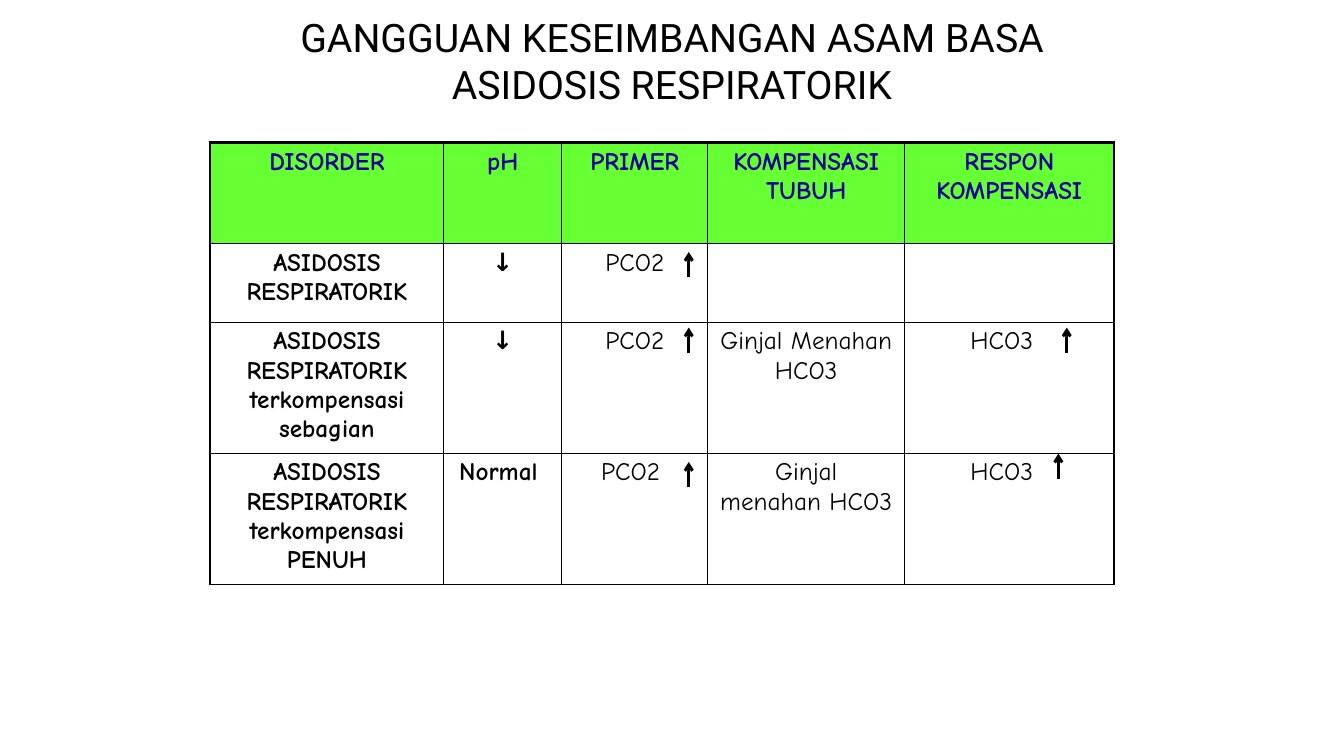
from lxml import etree
from pptx import Presentation
from pptx import util as u
from pptx.dml.color import RGBColor
from pptx.enum import shapes, text
from pptx.oxml import ns

COLUMN_WIDTHS = [27.84, 14.04, 17.4, 23.4, 24.96]
ROW_HEIGHTS = [12, 9.36, 15.6, 15.6]
DISORDERS = [
    ["DISORDER", "pH", "PRIMER", "KOMPENSASI TUBUH", "RESPON KOMPENSASI"],
    ["ASIDOSIS RESPIRATORIK", "↓", "PCO2", "", ""],
    ["ASIDOSIS RESPIRATORIK terkompensasi sebagian", "↓", "PCO2",
     "Ginjal Menahan HCO3", "HCO3"],
    ["ASIDOSIS RESPIRATORIK terkompensasi PENUH", "Normal ", "PCO2 ",
     "Ginjal\vmenahan HCO3", "HCO3"],
]
RISE_ARROWS = [(126, 57), (82, 33), (82, 42), (82, 58), (127, 42)]


def color(value):
    """Turn a hex string into a colour."""
    return RGBColor.from_string(value)


def grid(units):
    """Turn grid units, 160 across and 90 down the slide, into a length."""
    return u.Inches(units / 12)


class SlideBuilder:
    """Hold the style and the current slide."""

    title_font, table_font = "Roboto", "Comic Neue"
    ink, heading, header_fill, paper = "000000", "000099", "66FF33", "FFFFFF"
    thick, thin = 2.25, 1

    def __init__(self, deck):
        """Add a slide with a title to the deck."""
        self.page = deck.slides.add_slide(deck.slide_layouts[5])

    def center_text(self, frame, words, font, size, ink, bold=False):
        """Put one centred paragraph into a text frame."""
        frame.text = words
        paragraph = frame.paragraphs[0]
        paragraph.alignment = text.PP_ALIGN.CENTER
        paragraph.font.name, paragraph.font.size = font, u.Pt(size)
        paragraph.font.bold = bold
        paragraph.font.color.rgb = color(ink)

    def title(self, words, left, top, width, height):
        """Place and fill the title placeholder."""
        box = self.page.shapes.title
        box.left, box.top = grid(left), grid(top)
        box.width, box.height = grid(width), grid(height)
        frame = box.text_frame
        frame.auto_size = text.MSO_AUTO_SIZE.NONE
        frame.vertical_anchor = text.MSO_ANCHOR.TOP
        self.center_text(frame, words, self.title_font, 28, self.ink)

    def border(self, cell, side, width):
        """Draw one side of a table cell."""
        line = etree.SubElement(cell._tc.get_or_add_tcPr(),
                                ns.qn("a:ln" + side), w=str(u.Pt(width)))
        fill = etree.SubElement(line, ns.qn("a:solidFill"))
        etree.SubElement(fill, ns.qn("a:srgbClr"), val=self.ink)

    def table(self, left, top, widths, heights, rows):
        """Add a table with a coloured header and a heavy outer frame."""
        frame = self.page.shapes.add_table(
            len(heights), len(widths), grid(left), grid(top),
            grid(sum(widths)), grid(sum(heights)))
        table = frame.table
        table.first_row = table.horz_banding = False
        for column, width in zip(table.columns, widths):
            column.width = grid(width)
        for row, height in zip(table.rows, heights):
            row.height = grid(height)
        last = len(widths) - 1
        for r, row in enumerate(rows):
            for c, words in enumerate(row):
                cell = table.cell(r, c)
                heavy = {"L": c == 0, "R": c == last, "T": r == 0, "B": False}
                for side, is_heavy in heavy.items():
                    self.border(cell, side,
                                self.thick if is_heavy else self.thin)
                cell.fill.solid()
                cell.fill.fore_color.rgb = color(
                    self.paper if r else self.header_fill)
                if r and c == last:
                    cell.margin_right = u.Inches(0.25)
                self.center_text(cell.text_frame, words, self.table_font, 18,
                                 self.ink if r else self.heading,
                                 bold=r == 0 or c < 2)

    def rise_arrow(self, x, y, length=3):
        """Add an arrow pointing up from a grid point."""
        arrow = self.page.shapes.add_connector(
            shapes.MSO_CONNECTOR.STRAIGHT,
            grid(x), grid(y), grid(x), grid(y - length))
        arrow.line.color.rgb = color(self.ink)
        arrow.line.width = u.Pt(2)
        etree.SubElement(arrow.line._get_or_add_ln(), ns.qn("a:tailEnd"),
                         type="arrow")
        etree.SubElement(arrow._element.spPr, ns.qn("a:effectLst"))


def main():
    """Build and save the slide."""
    deck = Presentation()
    deck.slide_width, deck.slide_height = grid(160), grid(90)
    builder = SlideBuilder(deck)
    builder.title("GANGGUAN KESEIMBANGAN ASAM BASA ASIDOSIS RESPIRATORIK",
                  29, 1, 102, 15)
    builder.table(25, 17, COLUMN_WIDTHS, ROW_HEIGHTS, DISORDERS)
    for x, y in RISE_ARROWS:
        builder.rise_arrow(x, y)
    deck.save("out.pptx")


if __name__ == "__main__":
    main()
